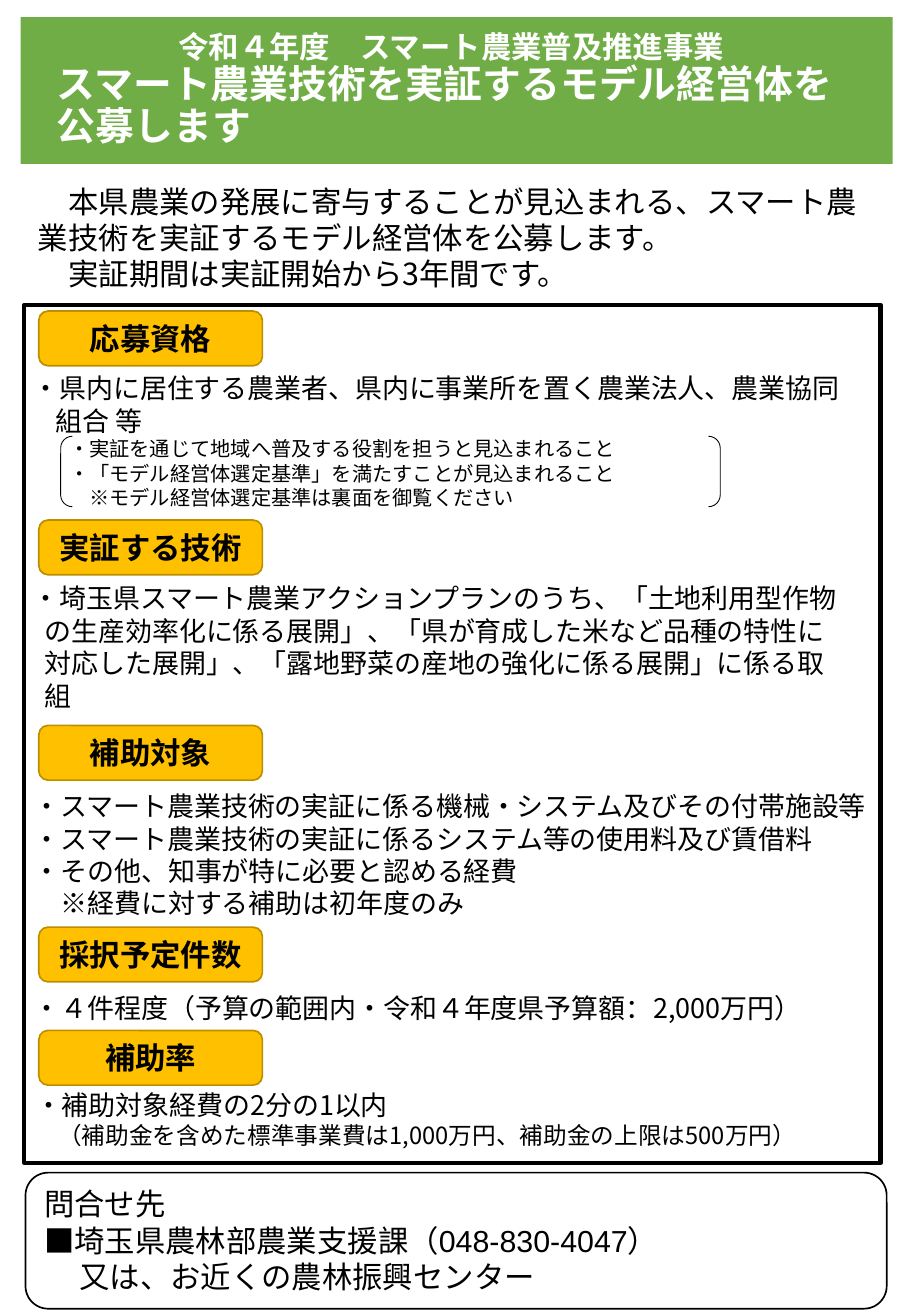
from lxml.etree import SubElement
from pptx import Presentation
from pptx.dml.color import RGBColor
from pptx.enum.shapes import MSO_SHAPE
from pptx.enum.text import MSO_ANCHOR, PP_ALIGN
from pptx.oxml.ns import qn
from pptx.util import Inches, Pt

FONT = "Noto Sans CJK JP"
COLORS = {"green": "70AD47", "amber": "FFC000", "amber_edge": "BD8E00",
          "white": "FFFFFF", "black": "000000"}

prs = Presentation()
prs.slide_width, prs.slide_height = Inches(7.5), Inches(10.83)
slide = prs.slides.add_slide(prs.slide_layouts[6])


def add_panel(kind, box, fill=None, line=None, weight=1):
    panel = slide.shapes.add_shape(kind, *[Inches(v) for v in box])
    panel.shadow.inherit = False
    if fill:
        panel.fill.solid()
        panel.fill.fore_color.rgb = RGBColor.from_string(COLORS[fill])
    else:
        panel.fill.background()
    if line:
        panel.line.color.rgb = RGBColor.from_string(COLORS[line])
        panel.line.width = Pt(weight)
    else:
        panel.line.fill.background()
    return panel


def write(holder, lines, color="black", bold=False, align=PP_ALIGN.LEFT,
          anchor=MSO_ANCHOR.TOP, spacing=None):
    """Each line is (text, size, left margin, first-line indent)."""
    frame = holder.text_frame
    frame.word_wrap = True
    frame.vertical_anchor = anchor
    for i, (text, size, margin, indent) in enumerate(lines):
        paragraph = frame.add_paragraph() if i else frame.paragraphs[0]
        paragraph.text = text
        paragraph.alignment = align
        if spacing:
            paragraph.line_spacing = spacing
        font = paragraph.font
        font.name, font.size, font.bold = FONT, Pt(size), bold
        font.color.rgb = RGBColor.from_string(COLORS[color])
        properties = paragraph._p.get_or_add_pPr()
        properties.set("marL", str(Inches(margin)))
        properties.set("indent", str(Inches(indent)))
        SubElement(properties.find(qn("a:defRPr")), qn("a:ea"), typeface=FONT)


# Title band
title = add_panel(MSO_SHAPE.RECTANGLE, (0.17, 0.14, 7.18, 1.21), "green")
write(title, [
    ("令和４年度　スマート農業普及推進事業", 18, 1.2, 0),
    ("スマート農業技術を実証するモデル経営体を\v公募します", 23, 0.2, 0),
], "white", bold=True, anchor=MSO_ANCHOR.MIDDLE, spacing=0.9)

# Introduction
intro = add_panel(MSO_SHAPE.ROUNDED_RECTANGLE, (0.16, 1.4, 7.09, 1.12), "white")
write(intro, [
    ("　本県農業の発展に寄与することが見込まれる、スマート農業技術を実証するモデル経営体を公募します。", 18, 0, 0),
    ("　実証期間は実証開始から3年間です。", 18, 0, 0),
])

# Frame around the conditions, and the brackets around the eligibility notes
add_panel(MSO_SHAPE.RECTANGLE, (0.2, 2.51, 7.05, 7.06), line="black", weight=2.5)
add_panel(MSO_SHAPE.DOUBLE_BRACKET, (0.5, 3.59, 5.43, 0.58), line="black", weight=0.5)

# Conditions: heading, heading top, text box, lines
sections = [
    ("応募資格", 2.56, (0.17, 3.01, 7.04, 1.25), [
        ("・県内に居住する農業者、県内に事業所を置く農業法人、農業協同組合 等", 16, 0.19, -0.19),
        ("・実証を通じて地域へ普及する役割を担うと見込まれること", 12, 0.5, -0.2),
        ("・「モデル経営体選定基準」を満たすことが見込まれること", 12, 0.5, -0.2),
        ("　※モデル経営体選定基準は裏面を御覧ください", 12, 0.5, -0.2),
    ]),
    ("実証する技術", 4.28, (0.17, 4.74, 6.83, 1.18), [
        ("・埼玉県スマート農業アクションプランのうち、「土地利用型作物の生産効率化に係る展開」、"
         "「県が育成した米など品種の特性に対応した展開」、"
         "「露地野菜の産地の強化に係る展開」に係る取組", 16, 0.1, -0.1),
    ]),
    ("補助対象", 5.97, (0.18, 6.45, 7.14, 1.18), [
        ("・スマート農業技術の実証に係る機械・システム及びその付帯施設等", 16, 0.3, -0.3),
        ("・スマート農業技術の実証に係るシステム等の使用料及び賃借料", 16, 0.3, -0.3),
        ("・その他、知事が特に必要と認める経費", 16, 0.3, -0.3),
        ("　※経費に対する補助は初年度のみ", 16, 0.3, -0.3),
    ]),
    ("採択予定件数", 7.63, (0.18, 8.11, 6.69, 0.37), [
        ("・４件程度（予算の範囲内・令和４年度県予算額：2,000万円）", 16, 0, 0),
    ]),
    ("補助率", 8.48, (0.19, 8.91, 7.04, 0.61), [
        ("・補助対象経費の2分の1以内", 16, 0.4, -0.4),
        ("（補助金を含めた標準事業費は1,000万円、補助金の上限は500万円）", 14, 0.4, -0.21),
    ]),
]
for heading, top, box, lines in sections:
    badge = add_panel(MSO_SHAPE.ROUNDED_RECTANGLE, (0.32, top, 1.84, 0.45),
                      "amber", "amber_edge")
    write(badge, [(heading, 18, 0, 0)], bold=True, align=PP_ALIGN.CENTER)
    details = slide.shapes.add_textbox(*[Inches(v) for v in box])
    write(details, lines)

# Contact
contact = add_panel(MSO_SHAPE.ROUNDED_RECTANGLE, (0.21, 9.65, 7.09, 1.12),
                    "white", "black")
write(contact, [
    ("問合せ先", 18, 0, 0),
    ("■", 18, 0, 0),
    ("又は、お近くの農林振興センター", 18, 0.29, 0),
])
office = contact.text_frame.paragraphs[1].add_run()
office.text = "埼玉県農林部農業支援課（048-830-4047）"
office.font.name = "Arial"

prs.save("out.pptx")
